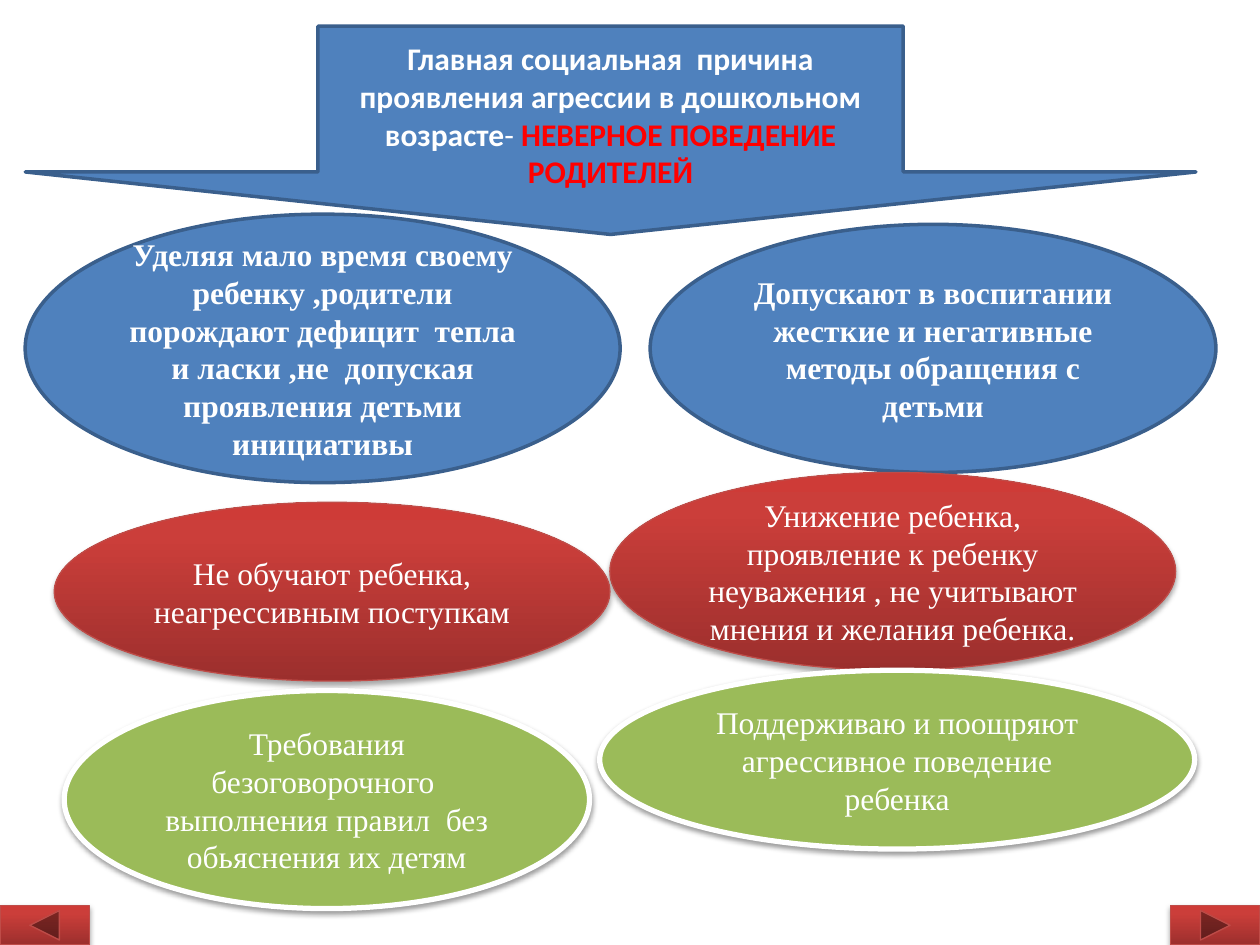
from copy import deepcopy
from lxml import etree
from pptx import Presentation, util as u
from pptx.dml.color import RGBColor
from pptx.enum import shapes, text
from pptx.oxml import ns

Pt = u.Pt
KIND = shapes.MSO_SHAPE
THEME = {
    "size": 18, "head": "Calibri", "body": "Times New Roman",
    "white": "FFFFFF", "alert": "FF0000", "shade": "000000",
}
# Shadows: opacity in percent, blur, distance
STYLES = {
    "blue": {"fill": "4F81BD", "line": "3A5F8C", "width": 2},
    "red": {"stops": [(0, "9C2F2D"), (0.8, "CB3E3A"), (1, "CE3B37")],
            "line": "BF4C48", "width": 0.75, "shadow": (35, 3.1, 1.8)},
    "green": {"fill": "9BBB59", "line": "FFFFFF", "width": 3,
              "shadow": (38, 3.1, 1.6)},
}


def add_form(kind, box, name):
    """Add a preset shape at box (left, top, width, height) in a named style."""
    look = STYLES[name]
    form = slide.shapes.add_shape(kind, *[Pt(v) for v in box])
    form.shadow.inherit = False
    form.line.color.rgb = RGBColor.from_string(look["line"])
    form.line.width = Pt(look["width"])
    props = form._element.spPr
    if "stops" in look:
        form.fill.gradient()
        form.fill.gradient_angle = 90
        stops = props.find(".//" + ns.qn("a:gsLst"))
        stops.append(deepcopy(stops[-1]))
        for stop, (place, color) in zip(form.fill.gradient_stops, look["stops"]):
            stop.position = place
            stop.color.rgb = RGBColor.from_string(color)
    else:
        form.fill.solid()
        form.fill.fore_color.rgb = RGBColor.from_string(look["fill"])
    if "shadow" in look:
        alpha, blur, dist = look["shadow"]
        outer = etree.SubElement(
            props.find(ns.qn("a:effectLst")), ns.qn("a:outerShdw"),
            blurRad=str(Pt(blur)), dist=str(Pt(dist)), dir="5400000", rotWithShape="0")
        tint = etree.SubElement(outer, ns.qn("a:srgbClr"), val=THEME["shade"])
        etree.SubElement(tint, ns.qn("a:alpha"), val=str(alpha * 1000))
    return form


def add_text(form, font, runs):
    """Write centred runs given as (words, bold, theme colour)."""
    frame = form.text_frame
    frame.word_wrap = True
    frame.vertical_anchor = text.MSO_ANCHOR.MIDDLE
    para = frame.paragraphs[0]
    para.alignment = text.PP_ALIGN.CENTER
    for words, bold, color in runs:
        run = para.add_run()
        run.text = words
        form_at = {"name": THEME[font], "size": Pt(THEME["size"]), "bold": bold}
        for key, value in form_at.items():
            setattr(run.font, key, value)
        run.font.color.rgb = RGBColor.from_string(THEME[color])


deck = Presentation()
deck.slide_width, deck.slide_height = Pt(720), Pt(540)
slide = deck.slides.add_slide(deck.slide_layouts[6])

arrow = add_form(KIND.DOWN_ARROW, (14.4, 15, 669, 119), "blue")
arrow.adjustments[0], arrow.adjustments[1] = 0.5, 0.3
add_text(arrow, "head", [
    ("Главная социальная  причина проявления агрессии в дошкольном возрасте", True, "white"),
    ("- ", False, "white"),
    ("НЕВЕРНОЕ ПОВЕДЕНИЕ РОДИТЕЛЕЙ", True, "alert"),
])

causes = [
    ("blue", (14.4, 122.4, 340, 153.4),
     "Уделяя мало время своему ребенку ,родители порождают дефицит  тепла "
     "и ласки ,не  допуская проявления детьми инициативы"),
    ("blue", (371.5, 128.2, 323.3, 141.8),
     "Допускают в воспитании жесткие и негативные методы обращения с детьми"),
    ("red", (348.5, 270, 323.3, 113),
     "Унижение ребенка, проявление к ребенку неуважения , не учитывают "
     "мнения и желания ребенка."),
    ("red", (31, 287, 317.5, 102.2),
     "Не обучают ребенка, неагрессивным поступкам"),
    ("green", (36.7, 394.6, 300.2, 124.6),
     "Требования безоговорочного  выполнения правил  без обьяснения их детям"),
    ("green", (342.7, 383, 340, 102.2),
     "Поддерживаю и поощряют агрессивное поведение ребенка"),
]
for name, box, words in causes:
    oval = add_form(KIND.OVAL, box, name)
    add_text(oval, "body", [(words, name == "blue", "white")])

wide, high = 51, 22.5
for kind, left in [(KIND.ACTION_BUTTON_FORWARD_OR_NEXT, 720 - wide),
                   (KIND.ACTION_BUTTON_BACK_OR_PREVIOUS, 0)]:
    add_form(kind, (left, 540 - high, wide, high), "red")

deck.save("out.pptx")
